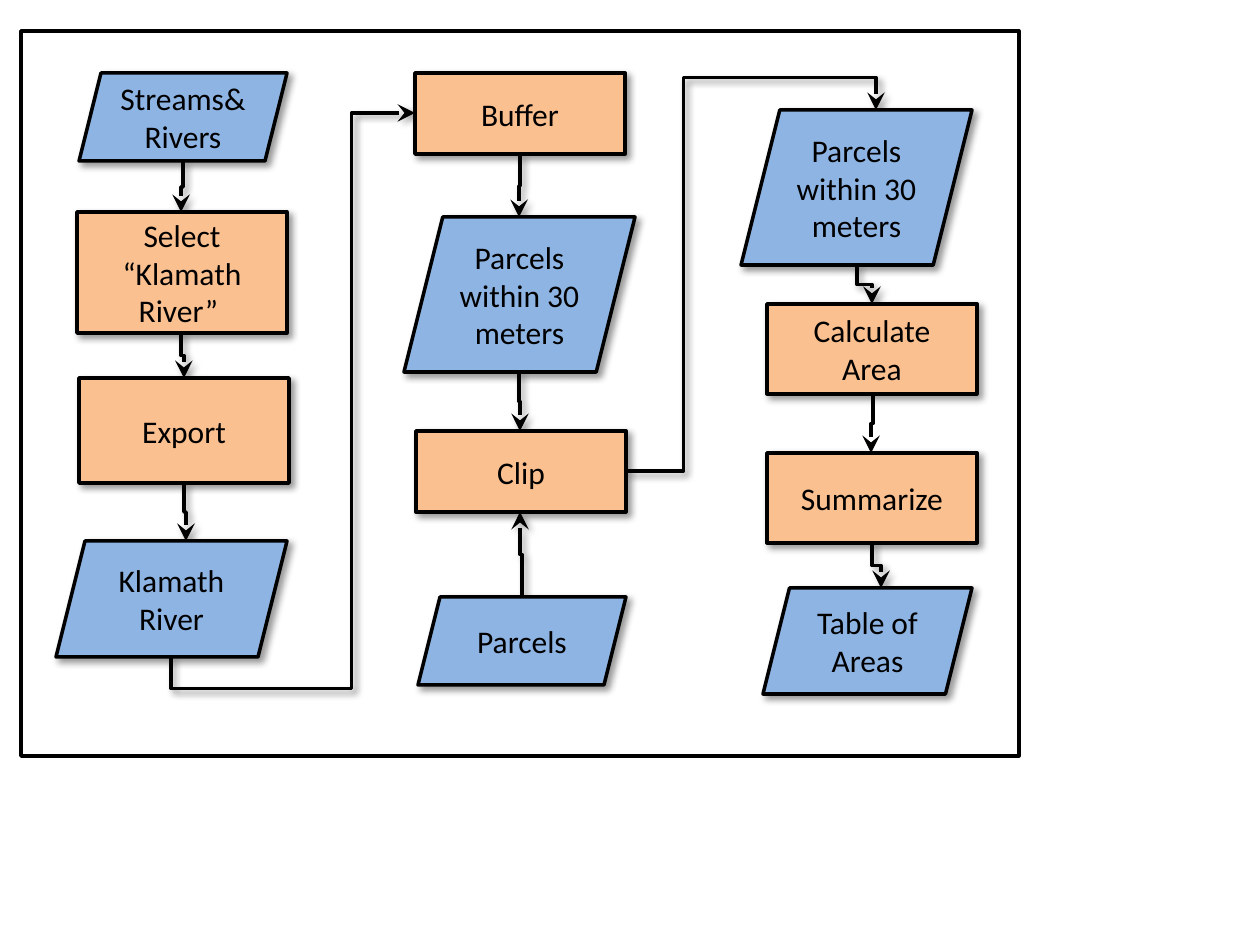
from dataclasses import dataclass

from lxml.etree import SubElement
from pptx import Presentation
from pptx.dml.color import RGBColor
from pptx.enum.shapes import MSO_CONNECTOR as Link, MSO_SHAPE as Preset
from pptx.enum.text import MSO_ANCHOR as Anchor, PP_ALIGN as Align
from pptx.oxml.ns import qn
from pptx.util import Pt

PX = 914400 / 126
BLACK, BLUE, ORANGE = "000000", "8EB4E3", "FAC090"


@dataclass
class Node:
    """A step of the flowchart: data is slanted, an operation is square."""
    text: str
    left: int
    top: int
    width: int
    height: int
    is_data: bool = False


@dataclass
class Arrow:
    """An elbow arrow; bends are fractions of its extent."""
    start: tuple[int, int]
    end: tuple[int, int]
    bends: tuple[float, ...] = (0.5,)
    upright: bool = True
    shadow: bool = True


NODES = [
    # Left column
    Node("Streams& Rivers", 79, 73, 208, 88, True),
    Node("Select “Klamath River” ", 77, 212, 210, 121),
    Node("Export", 79, 378, 210, 105),
    Node("Klamath River", 56, 541, 231, 116, True),
    # Middle column
    Node("Buffer", 415, 73, 210, 81),
    Node("Parcels within 30 meters", 404, 217, 231, 155, True),
    Node("Clip", 416, 431, 210, 81),
    Node("Parcels", 418, 597, 208, 88, True),
    # Right column
    Node("Parcels within 30 meters", 741, 110, 231, 155, True),
    Node("Calculate\nArea", 767, 304, 210, 90),
    Node("Summarize", 767, 453, 210, 90),
    Node("Table of\nAreas", 763, 588, 209, 106, True),
]

ARROWS = [
    # Left column
    Arrow((183, 162), (181, 212)),
    Arrow((181, 333), (184, 378)),
    Arrow((184, 483), (186, 541)),
    # Middle column
    Arrow((520, 155), (519, 217)),
    Arrow((519, 372), (520, 431)),
    Arrow((522, 597), (520, 512)),
    # Right column
    Arrow((857, 265), (872, 304)),
    Arrow((873, 394), (871, 453), shadow=False),
    Arrow((872, 543), (881, 588)),
    # From column to column
    Arrow((171, 656), (415, 113), (-0.06, 0.74)),
    Arrow((626, 471), (876, 110), (0.23, 1.09), upright=False),
]

# Rotation and flips of an upright elbow, by (goes down, goes right)
TURNS = {
    (True, False): (90, ""),
    (True, True): (270, "H"),
    (False, False): (270, "V"),
    (False, True): (90, "HV"),
}


def emu(px: float) -> int:
    return round(px * PX)


def color(value: str) -> RGBColor:
    return RGBColor.from_string(value)


def set_outline(item) -> None:
    item.line.color.rgb = color(BLACK)
    item.line.width = Pt(2)


def add_shadow(effects) -> None:
    outer = SubElement(effects, qn("a:outerShdw"), blurRad=str(Pt(4)),
                       dist=str(Pt(3)), dir="2700000", algn="tl", rotWithShape="0")
    tint = SubElement(outer, qn("a:srgbClr"), val=BLACK)
    SubElement(tint, qn("a:alpha"), val="40000")


def add_box(page, preset, left: int, top: int, width: int, height: int):
    box = page.shapes.add_shape(preset, emu(left), emu(top), emu(width), emu(height))
    box.shadow.inherit = False
    set_outline(box)
    return box


def draw_node(page, node: Node) -> None:
    preset = Preset.PARALLELOGRAM if node.is_data else Preset.RECTANGLE
    box = add_box(page, preset, node.left, node.top, node.width, node.height)
    box.fill.solid()
    box.fill.fore_color.rgb = color(BLUE if node.is_data else ORANGE)
    add_shadow(box.element.spPr.find(qn("a:effectLst")))

    frame = box.text_frame
    frame.word_wrap = True
    frame.vertical_anchor = Anchor.MIDDLE
    frame.text = node.text
    for para in frame.paragraphs:
        para.alignment = Align.CENTER
        para.font.name = "Calibri"
        para.font.size = Pt(18)
        para.font.color.rgb = color(BLACK)


def draw_arrow(page, arrow: Arrow) -> None:
    (x1, y1), (x2, y2) = arrow.start, arrow.end
    width, height = abs(x2 - x1), abs(y2 - y1)
    angle, flips = 0, "V" if y2 < y1 else ""
    if arrow.upright:
        # The box is stored lying down and turned about its centre
        width, height = height, width
        angle, flips = TURNS[y2 > y1, x2 > x1]
    left, top = (x1 + x2 - width) / 2, (y1 + y2 - height) / 2
    link = page.shapes.add_connector(Link.ELBOW, emu(left), emu(top),
                                     emu(left + width), emu(top + height))
    set_outline(link)

    # Turn, bends, arrowhead and shadow
    props = link.element.spPr
    transform = props.find(qn("a:xfrm"))
    transform.set("rot", str(angle * 60000))
    for axis in flips:
        transform.set(f"flip{axis}", "1")
    geometry = props.find(qn("a:prstGeom"))
    geometry.set("prst", f"bentConnector{len(arrow.bends) + 2}")
    guides = geometry.find(qn("a:avLst"))
    for number, bend in enumerate(arrow.bends, 1):
        SubElement(guides, qn("a:gd"), name=f"adj{number}",
                   fmla=f"val {round(bend * 100000)}")
    SubElement(props.find(qn("a:ln")), qn("a:tailEnd"), type="stealth", w="lg", len="lg")
    effects = SubElement(props, qn("a:effectLst"))
    if arrow.shadow:
        add_shadow(effects)


def main() -> None:
    deck = Presentation()
    deck.slide_width, deck.slide_height = emu(1260), emu(945)
    page = deck.slides.add_slide(deck.slide_layouts[6])

    # Frame around the flowchart
    add_box(page, Preset.RECTANGLE, 21, 31, 998, 725).fill.background()

    for arrow in ARROWS:
        draw_arrow(page, arrow)
    for node in NODES:
        draw_node(page, node)

    deck.save("out.pptx")


if __name__ == "__main__":
    main()
